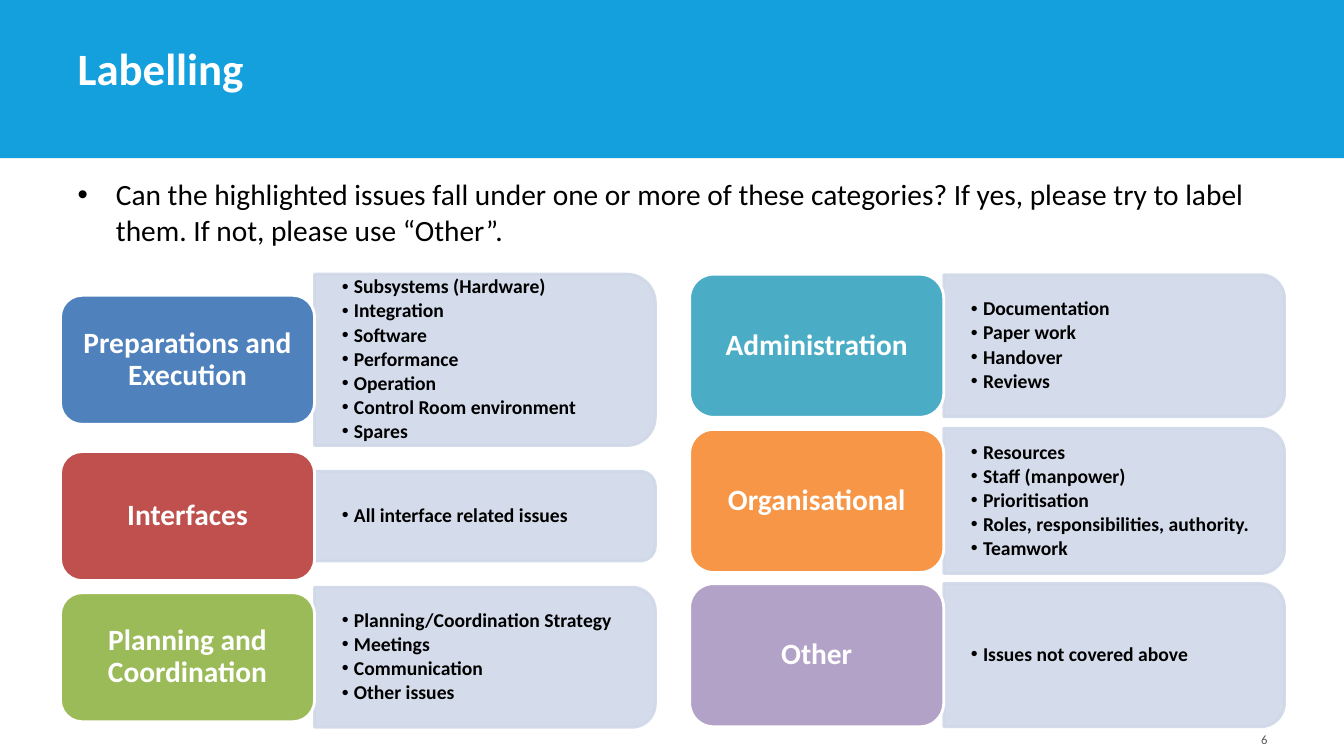
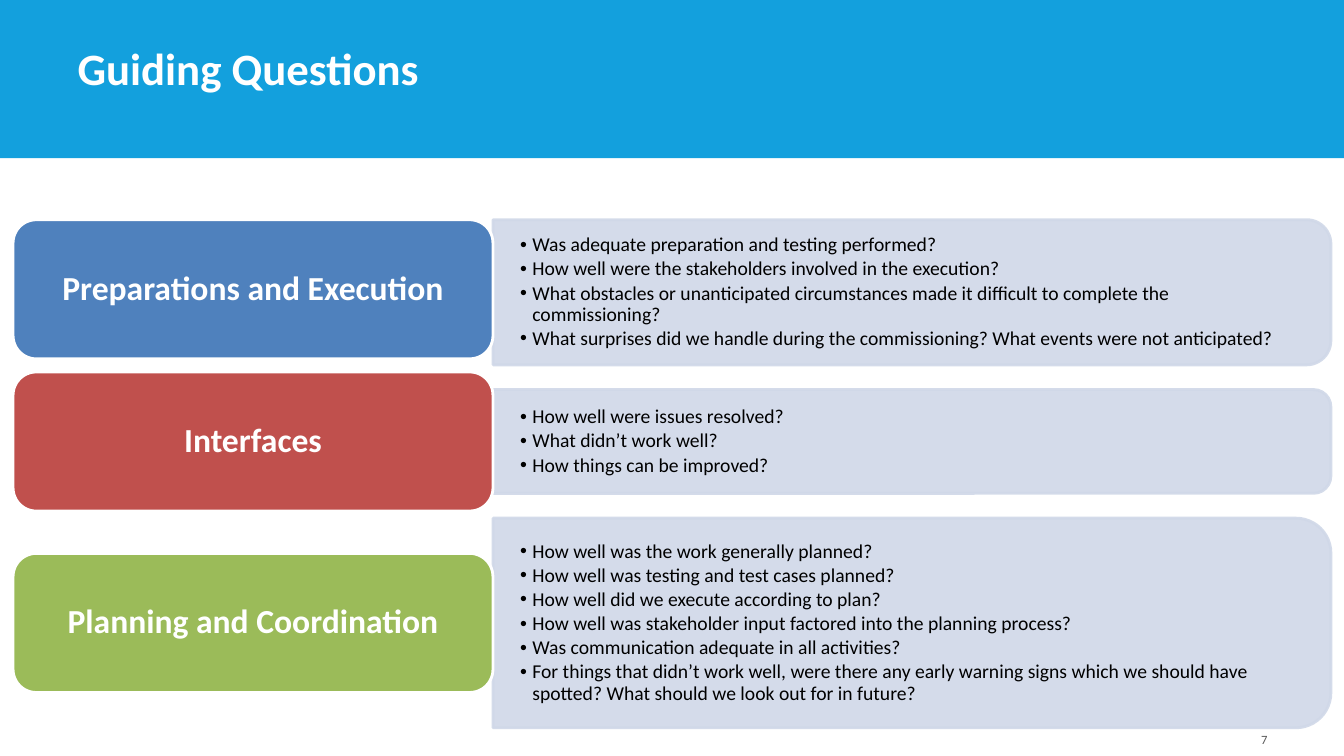
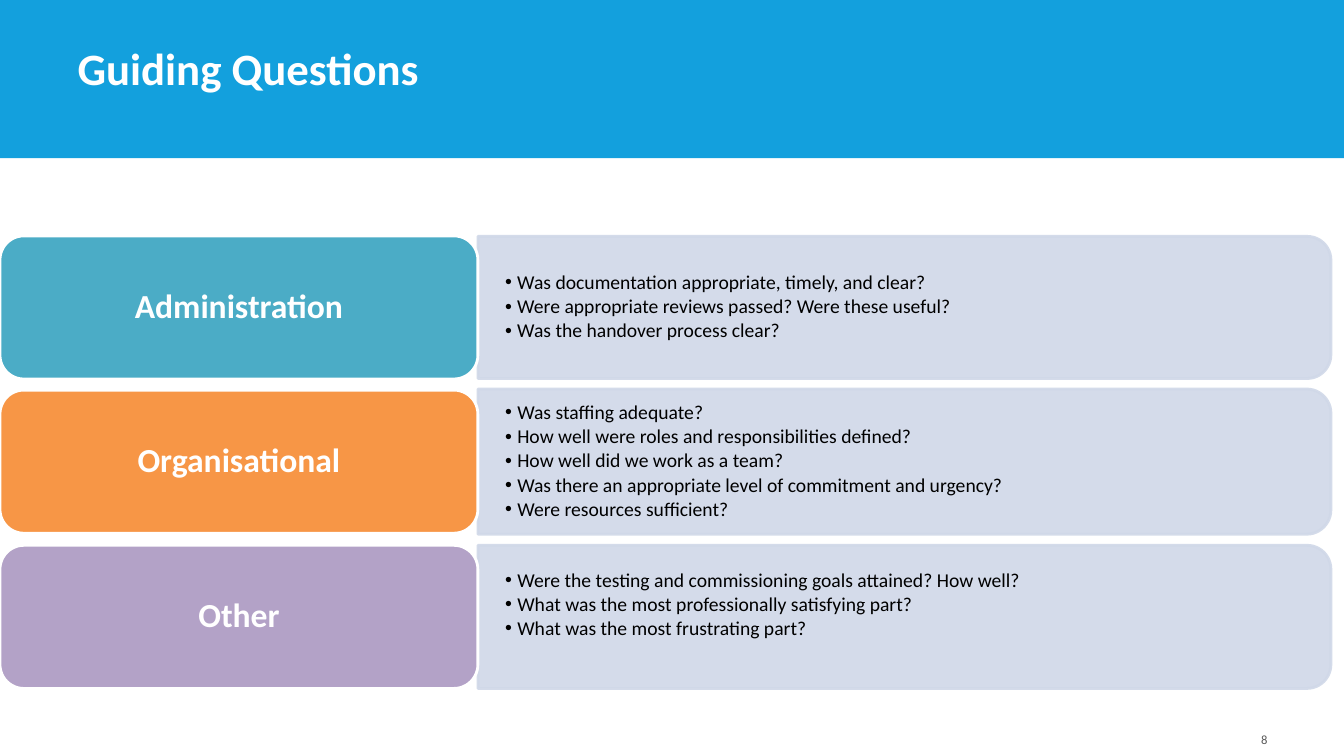
"""Build three slides on labelling issues and the questions that guide it."""
from dataclasses import dataclass

from lxml import etree
from pptx import Presentation
from pptx import util as u
from pptx.dml import color
from pptx.enum import shapes, text
from pptx.oxml import ns

FONT = "Calibri"
WHITE, BLACK, GREY = "FFFFFF", "000000", "595959"
BAND_BLUE, PANEL_BLUE = "13A0DD", "D0D8E8"
TITLE_AREA = (0.67, 0.38, 10.41, 0.61)
BODY_AREA = (0.67, 1.7, 12, 1.01)
NUMBER_AREA = (9.56, 7.06, 3.11, 0.4)
LABEL_COLOURS = {
    "Preparations and Execution": "4F81BD",
    "Interfaces": "C0504D",
    "Planning and Coordination": "9BBB59",
    "Administration": "4BACC6",
    "Organisational": "F79646",
    "Other": "B3A2C7",
}


@dataclass
class Column:
    """Measures shared by all rows of one column."""
    left: float
    label_width: float
    label_height: float
    panel_width: float
    label_size: int = 24
    bold_items: bool = False


@dataclass
class Row:
    """A category with its list, centred on one horizontal axis."""
    label: str
    middle: float
    panel_height: float
    items: list
    label_shift: float = 0
    text_shift: float = 0


def rgb(value):
    """Turn a hex string into a colour."""
    return color.RGBColor.from_string(value)


def lengths(area):
    """Turn numbers in inches into lengths."""
    return [u.Inches(value) for value in area]


def set_values(target, values):
    """Set each named attribute on the target."""
    for name, value in values.items():
        setattr(target, name, value)


def place(box, area):
    """Move and size a shape."""
    set_values(box, dict(zip(("left", "top", "width", "height"), lengths(area))))


def set_frame(box, anchor, insets=(0.1, 0.05, 0.1, 0.05)):
    """Set wrapping, anchor and insets of a text frame and return it."""
    frame = box.text_frame
    sides = ("margin_left", "margin_top", "margin_right", "margin_bottom")
    set_values(frame, {"word_wrap": True, "auto_size": text.MSO_AUTO_SIZE.NONE,
                       "vertical_anchor": anchor, **dict(zip(sides, lengths(insets)))})
    return frame


def write(para, words, size, hex_colour, bold=False, **paragraph_values):
    """Write one formatted run into a paragraph."""
    set_values(para, paragraph_values)
    span = para.add_run()
    span.text = words
    set_values(span.font, {"name": FONT, "size": u.Pt(size), "bold": bold})
    span.font.color.rgb = rgb(hex_colour)


def add_bullet(para, indent):
    """Give a paragraph a round bullet with a hanging indent."""
    props = para._p.get_or_add_pPr()
    props.set("marL", str(u.Inches(indent)))
    props.set("indent", str(-u.Inches(indent)))
    etree.SubElement(props, ns.qn("a:buFont"), typeface="Arial")
    etree.SubElement(props, ns.qn("a:buChar"), char="•")


def add_block(page, kind, area, fill, line=None):
    """Add a flat filled shape, outlined if a line colour is given."""
    block = page.shapes.add_shape(kind, *lengths(area))
    block.shadow.inherit = False
    block.fill.solid()
    block.fill.fore_color.rgb = rgb(fill)
    if line:
        block.line.color.rgb = rgb(line)
        block.line.width = u.Pt(2)
    else:
        block.line.fill.background()
    return block


def add_master_band(deck, page):
    """Put the title band behind everything on the slide master."""
    band = add_block(page, shapes.MSO_SHAPE.RECTANGLE, (0, 0, 13.33, 1.57), BAND_BLUE)
    deck.slide_master.shapes.element.insert(2, band.element)


def add_page(deck, layout_name, title, number):
    """Add a slide with its title and slide number."""
    page = deck.slides.add_slide(deck.slide_layouts.get_by_name(layout_name))
    heading = page.shapes.title
    place(heading, TITLE_AREA)
    frame = set_frame(heading, text.MSO_ANCHOR.BOTTOM)
    write(frame.paragraphs[0], title, 32, WHITE, True, alignment=text.PP_ALIGN.LEFT)
    box = page.shapes.add_textbox(*lengths(NUMBER_AREA))
    frame = set_frame(box, text.MSO_ANCHOR.BOTTOM)
    write(frame.paragraphs[0], str(number), 9, GREY, alignment=text.PP_ALIGN.RIGHT)
    return page


def fill_body(page, words):
    """Write a bulleted sentence into the body placeholder."""
    body = page.placeholders[1]
    place(body, BODY_AREA)
    para = set_frame(body, text.MSO_ANCHOR.TOP).paragraphs[0]
    add_bullet(para, 0.38)
    write(para, words, 21, BLACK, space_before=u.Pt(0))


def add_panel(page, left, column, row):
    """Add a pale panel with rounded right corners and its bulleted list."""
    width, height = column.panel_width, row.panel_height
    turned = (left + (width - height) / 2, row.middle - width / 2, height, width)
    panel = add_block(page, shapes.MSO_SHAPE.ROUND_2_SAME_RECTANGLE, turned,
                      PANEL_BLUE, PANEL_BLUE)
    panel.rotation = 90
    for tint in panel.element.spPr.iter(ns.qn("a:srgbClr")):
        etree.SubElement(tint, ns.qn("a:alpha"), val="90000")

    corner = 0.048 * height
    area = (left, row.middle - height / 2 + corner + row.text_shift,
            width - corner, height - 2 * corner)
    box = page.shapes.add_textbox(*lengths(area))
    frame = set_frame(box, text.MSO_ANCHOR.MIDDLE, (0.27, 0.14, 0.25, 0.14))
    for index, item in enumerate(row.items):
        para = frame.add_paragraph() if index else frame.paragraphs[0]
        add_bullet(para, 0.12)
        write(para, item, 14, BLACK, column.bold_items,
              line_spacing=0.9, space_after=u.Pt(2.1))


def add_label(page, column, row):
    """Add the coloured category label of a row."""
    top = row.middle + row.label_shift - column.label_height / 2
    area = (column.left, top, column.label_width, column.label_height)
    label = add_block(page, shapes.MSO_SHAPE.ROUNDED_RECTANGLE, area,
                      LABEL_COLOURS[row.label], WHITE)
    frame = set_frame(label, text.MSO_ANCHOR.MIDDLE, (0.09, 0.04, 0.09, 0.04))
    write(frame.paragraphs[0], row.label, column.label_size, WHITE, True,
          alignment=text.PP_ALIGN.CENTER, line_spacing=0.9)


def add_column(page, column, rows):
    """Add every row of a column."""
    for row in rows:
        add_panel(page, column.left + column.label_width, column, row)
        add_label(page, column, row)


def add_labelling(deck):
    """Add the overview of the six categories."""
    page = add_page(deck, "Title and Content", "Labelling", 6)
    fill_body(page, "Can the highlighted issues fall under one or more of these categories? "
                    "If yes, please try to label them. If not, please use “Other”.")
    add_column(page, Column(0.6, 2.52, 1.28, 3.38, 21, True), [
        Row("Preparations and Execution", 3.57, 1.7, [
            "Subsystems (Hardware)", "Integration", "Software", "Performance",
            "Operation", "Control Room environment", "Spares"]),
        Row("Interfaces", 5.12, 0.89, ["All interface related issues"]),
        Row("Planning and Coordination", 6.52, 1.39, [
            "Planning/Coordination Strategy", "Meetings", "Communication", "Other issues"]),
    ])
    add_column(page, Column(6.84, 2.52, 1.42, 3.38, 21, True), [
        Row("Administration", 3.43, 1.41, [
            "Documentation", "Paper work", "Handover", "Reviews"]),
        Row("Organisational", 4.97, 1.44, [
            "Resources", "Staff (manpower)", "Prioritisation",
            "Roles, responsibilities, authority.", "Teamwork"]),
        Row("Other", 6.5, 1.42, ["Issues not covered above"]),
    ])
    return page


def add_work_questions(deck):
    """Add the questions on execution, interfaces and planning."""
    page = add_page(deck, "Title Only", "Guiding Questions", 7)
    add_column(page, Column(0.13, 4.76, 1.38, 8.31), [
        Row("Preparations and Execution", 2.9, 1.44, [
            "Was adequate preparation and testing performed?",
            "How well were the stakeholders involved in the execution?",
            "What obstacles or unanticipated circumstances made it difficult to complete "
            "the commissioning?",
            "What surprises did we handle during the commissioning? "
            "What events were not anticipated?"], label_shift=-0.03),
        Row("Interfaces", 4.38, 1.03, [
            "How well were issues resolved?",
            "What didn’t work well?",
            "How things can be improved?"]),
        Row("Planning and Coordination", 6.18, 2.08, [
            "How well was the work generally planned?",
            "How well was testing and test cases planned?",
            "How well did we execute according to plan?",
            "How well was stakeholder input factored into the planning process?",
            "Was communication adequate in all activities?",
            "For things that didn’t work well, were there any early warning signs which "
            "we should have spotted? What should we look out for in future?"]),
    ])


def add_team_questions(deck):
    """Add the questions on administration, organisation and the rest."""
    page = add_page(deck, "Title Only", "Guiding Questions", 8)
    add_column(page, Column(0, 4.74, 1.42, 8.46), [
        Row("Administration", 3.05, 1.41, [
            "Was documentation appropriate, timely, and clear?",
            "Were appropriate reviews passed? Were these useful?",
            "Was the handover process clear?"]),
        Row("Organisational", 4.58, 1.44, [
            "Was staffing adequate?",
            "How well were roles and responsibilities defined?",
            "How well did we work as a team?",
            "Was there an appropriate level of commitment and urgency?",
            "Were resources sufficient?"]),
        Row("Other", 6.12, 1.42, [
            "Were the testing and commissioning goals attained? How well?",
            "What was the most professionally satisfying part?",
            "What was the most frustrating part?"], text_shift=-0.12),
    ])


def main():
    """Build and save the deck."""
    deck = Presentation()
    set_values(deck, {"slide_width": u.Inches(13.33), "slide_height": u.Inches(7.5)})
    first_page = add_labelling(deck)
    add_master_band(deck, first_page)
    add_work_questions(deck)
    add_team_questions(deck)
    deck.save("out.pptx")


if __name__ == "__main__":
    main()
